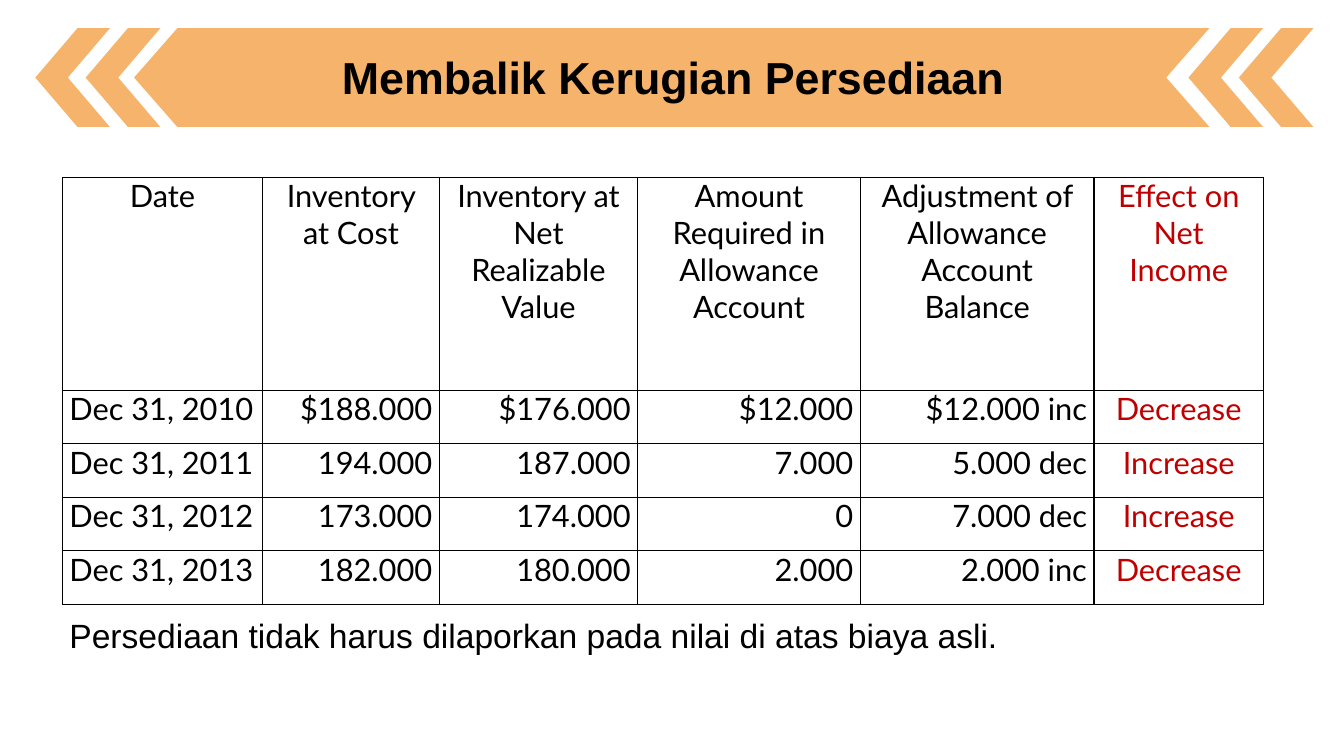
import dataclasses
import typing

import lxml.etree
import pptx
import pptx.dml.color
import pptx.enum.shapes
import pptx.enum.text
import pptx.oxml.ns
import pptx.slide
import pptx.util

Cm = pptx.util.Cm
ALIGN = pptx.enum.text.PP_ALIGN
COLORS = {"banner": "F3932D", "text": "000000", "effect": "C00000"}
BANNER_OPACITY = 70
BANNER_TOP, BANNER_HEIGHT = 0.71, 2.49
CHEVRON_WIDTH = 1.88
NOTCH = 1.09


@dataclasses.dataclass(frozen=True)
class Column:
    heading: str
    width: float
    align: typing.Any
    values: tuple[str, ...]
    color: str = "text"


COLUMNS = (
    Column("Date", 5.05, ALIGN.JUSTIFY,
           ("Dec 31, 2010", "Dec 31, 2011", "Dec 31, 2012", "Dec 31, 2013")),
    Column("Inventory at Cost", 4.45, ALIGN.RIGHT,
           ("$188.000", "194.000", "173.000", "182.000")),
    Column("Inventory at Net Realizable Value", 5.0, ALIGN.RIGHT,
           ("$176.000", "187.000", "174.000", "180.000")),
    Column("Amount Required in Allowance Account", 5.61, ALIGN.RIGHT,
           ("$12.000", "7.000", "0", "2.000")),
    Column("Adjustment of Allowance Account Balance", 5.89, ALIGN.RIGHT,
           ("$12.000 inc", "5.000 dec", "7.000 dec", "2.000 inc")),
    Column("Effect on Net Income", 4.27, ALIGN.CENTER,
           ("Decrease", "Increase", "Increase", "Decrease"), "effect"),
)
ROW_HEIGHTS = (5.36, 1.35, 1.35, 1.35, 1.35)


def rgb(name: str) -> pptx.dml.color.RGBColor:
    return pptx.dml.color.RGBColor.from_string(COLORS[name])


def write(tf: typing.Any, text: str, *, size: float, font: str = "Arial",
          color: str = "text", bold: bool = False, align: typing.Any = ALIGN.LEFT) -> None:
    p = tf.paragraphs[0]
    p.alignment = align
    r = p.add_run()
    r.text = text
    r.font.size = pptx.util.Pt(size)
    r.font.name = font
    r.font.bold = bold
    r.font.color.rgb = rgb(color)


def add_text(s: pptx.slide.Slide, text: str, left: float, top: float, width: float,
             height: float, anchor: typing.Any, **style: typing.Any) -> None:
    tf = s.shapes.add_textbox(Cm(left), Cm(top), Cm(width), Cm(height)).text_frame
    tf.word_wrap = True
    tf.vertical_anchor = anchor
    write(tf, text, **style)


def paint_banner(sp: typing.Any) -> None:
    """Give a banner part its translucent fill, without line or shadow."""
    sp.shadow.inherit = False
    sp.line.fill.background()
    sp.fill.solid()
    sp.fill.fore_color.rgb = rgb("banner")
    clr = sp.fill._xPr.find(".//" + pptx.oxml.ns.qn("a:srgbClr"))
    lxml.etree.SubElement(clr, pptx.oxml.ns.qn("a:alpha"), val=str(BANNER_OPACITY * 1000))


def add_banner(s: pptx.slide.Slide) -> None:
    for left in (0.89, 2.16, 29.95, 31.22):
        sp = s.shapes.add_shape(pptx.enum.shapes.MSO_SHAPE.CHEVRON, Cm(left), Cm(BANNER_TOP),
                                Cm(CHEVRON_WIDTH), Cm(BANNER_HEIGHT))
        sp.adjustments[0] = 0.565
        sp.rotation = 180
        paint_banner(sp)

    left, right = 3.38, 30.48
    top, bottom = BANNER_TOP, BANNER_TOP + BANNER_HEIGHT
    middle = (top + bottom) / 2
    outline = [(left + NOTCH, top), (right, top), (right - NOTCH, middle),
               (right, bottom), (left + NOTCH, bottom), (left, middle)]
    points = [(Cm(x), Cm(y)) for x, y in outline]
    builder = s.shapes.build_freeform(*points[0])
    builder.add_line_segments(points[1:], close=True)
    paint_banner(builder.convert_to_shape())


def add_borders(cell: typing.Any, width: float = 1) -> None:
    qn = pptx.oxml.ns.qn
    tc_pr = cell._tc.get_or_add_tcPr()
    for i, side in enumerate(("a:lnL", "a:lnR", "a:lnT", "a:lnB")):
        ln = lxml.etree.Element(qn(side), w=str(pptx.util.Pt(width)))
        fill = lxml.etree.SubElement(ln, qn("a:solidFill"))
        lxml.etree.SubElement(fill, qn("a:srgbClr"), val=COLORS["text"])
        tc_pr.insert(i, ln)


def add_inventory_table(s: pptx.slide.Slide) -> None:
    width = sum(column.width for column in COLUMNS)
    table = s.shapes.add_table(len(ROW_HEIGHTS), len(COLUMNS), Cm(1.57), Cm(4.47),
                               Cm(width), Cm(sum(ROW_HEIGHTS))).table
    table.first_row = table.horz_banding = False
    for row, height in zip(table.rows, ROW_HEIGHTS):
        row.height = Cm(height)
    for c, column in enumerate(COLUMNS):
        table.columns[c].width = Cm(column.width)
        for r, text in enumerate((column.heading, *column.values)):
            cell = table.cell(r, c)
            cell.margin_left = cell.margin_right = Cm(0.18)
            cell.margin_top = cell.margin_bottom = 0
            cell.fill.background()
            add_borders(cell)
            write(cell.text_frame, text, size=22, font="Lato", color=column.color,
                  align=column.align if r else ALIGN.CENTER)


def main() -> None:
    prs = pptx.Presentation()
    prs.slide_width, prs.slide_height = Cm(33.87), Cm(19.05)
    s = prs.slides.add_slide(prs.slide_layouts[6])
    anchor = pptx.enum.text.MSO_ANCHOR
    add_banner(s)
    add_text(s, "Membalik Kerugian Persediaan", 0.89, 0.94, 32.16, 2.0, anchor.MIDDLE,
             size=32, bold=True, align=ALIGN.CENTER)
    add_inventory_table(s)
    add_text(s, "Persediaan tidak harus dilaporkan pada nilai di atas biaya asli.",
             1.5, 15.37, 30.28, 1.27, anchor.TOP, size=24)
    prs.save("out.pptx")


if __name__ == "__main__":
    main()
